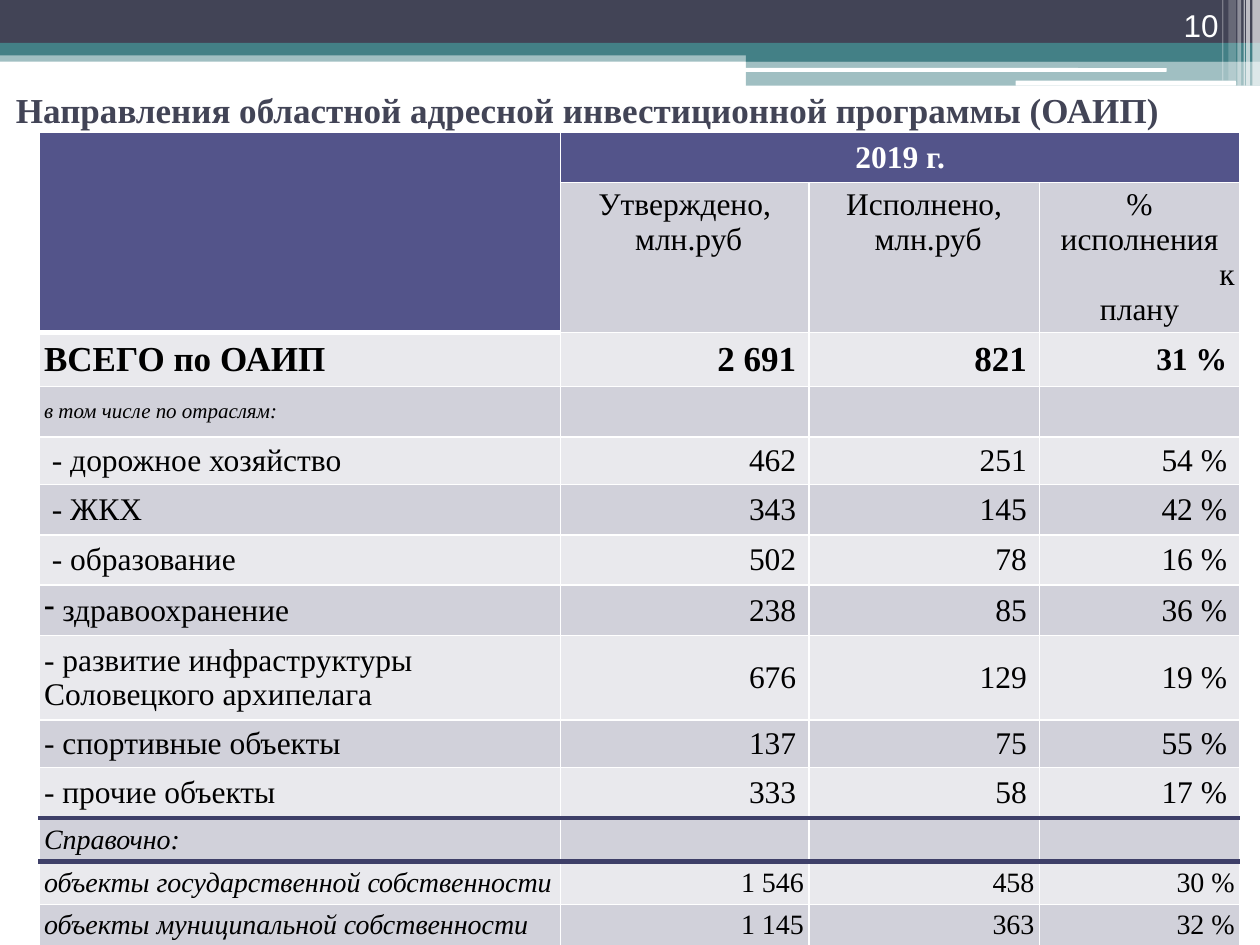
import pptx
import pptx.util
import pptx.dml.color
import pptx.enum.shapes
import pptx.enum.text
import pptx.oxml.ns
import lxml.etree

Inches = pptx.util.Inches
ALIGN = pptx.enum.text.PP_ALIGN
ANCHOR = pptx.enum.text.MSO_ANCHOR
SHAPE = pptx.enum.shapes.MSO_SHAPE
SERIF = "Times New Roman"
INDIGO, SLATE, TEAL, WHITE = "53548A", "424456", "438086", "FFFFFF"
DARK, LIGHT, RULE = "D1D1DA", "E9E9ED", "3E3F68"

BANDS = [
    (0, 0.4, 10, 0.09, TEAL, 50),
    (0, 0, 10, 0.34, SLATE, 100),
    (0, 0.34, 10, 0.1, TEAL, 100),
    (5.92, 0.39, 4.08, 0.1, TEAL, 100),
    (5.92, 0.48, 4.08, 0.2, TEAL, 50),
]
HIGHLIGHTS = [(5.91, 0.54, 3.35, 0.03, WHITE, 100), (8.06, 0.64, 1.75, 0.04, WHITE, 100)]
STRIPES = [
    (9.94, 0, 0.06, 0.68, WHITE, 65),
    (9.89, 0, 0.03, 0.68, WHITE, 65),
    (9.87, 0, 0.01, 0.68, WHITE, 60),
    (9.82, 0, 0.03, 0.68, WHITE, 40),
    (9.75, 0, 0.06, 0.64, WHITE, 20),
    (9.7, 0, 0.01, 0.64, WHITE, 30),
]
COLUMN_WIDTHS = [4.14, 1.97, 1.83, 1.59]
ROW_HEIGHTS = [0.4, 0.84, 0.43, 0.4, 0.33, 0.4, 0.4, 0.4, 0.67, 0.33, 0.4, 0.34, 0.34, 0.44]
COLUMN_TITLES = [
    [("Утверждено,", ALIGN.CENTER), (" млн.руб", ALIGN.CENTER)],
    [("Исполнено,", ALIGN.CENTER), (" млн.руб", ALIGN.CENTER)],
    [("% исполнения", ALIGN.CENTER), ("к", ALIGN.RIGHT), ("плану", ALIGN.CENTER)],
]
PROGRAM_ROWS = [
    ("ВСЕГО по ОАИП", "2 691", "821", "31 %"),
    ("в том числе по отраслям:", "", "", ""),
    (" - дорожное хозяйство", "462", "251", "54 %"),
    (" - ЖКХ", "343", "145", "42 %"),
    (" - образование", "502", "78", "16 %"),
    (" здравоохранение", "238", "85", "36 %"),
    ("- развитие инфраструктуры Соловецкого архипелага", "676", "129", "19 %"),
    ("- спортивные объекты", "137", "75", "55 %"),
    ("- прочие объекты", "333", "58", "17 %"),
    ("Справочно:", "", "", ""),
    ("объекты государственной собственности", "1 546", "458", "30 %"),
    ("объекты муниципальной собственности", "1 145", "363", "32 %"),
]
TOTAL_ROW, SUBHEAD_ROW, HEALTH_ROW, REFERENCE_ROW, LAST_ROW = 2, 3, 7, 11, 13
RULED_ROWS = (REFERENCE_ROW - 1, REFERENCE_ROW)


def rgb(color):
    """Turn a hex string into a colour value."""
    return pptx.dml.color.RGBColor.from_string(color)


def style(paragraph, size, color, name=SERIF, bold=False, italic=False, align=ALIGN.LEFT):
    """Set the font and alignment of a paragraph."""
    font = paragraph.font
    font.size, font.name, font.bold, font.italic = pptx.util.Pt(size), name, bold, italic
    font.color.rgb = rgb(color)
    paragraph.alignment = align


def add_band(slide, preset, left, top, width, height, color, opacity):
    """Add one plain header band of the given opacity in percent."""
    band = slide.shapes.add_shape(preset, Inches(left), Inches(top), Inches(width), Inches(height))
    band.shadow.inherit = False
    band.line.fill.background()
    band.fill.solid()
    band.fill.fore_color.rgb = rgb(color)
    if opacity < 100:
        swatch = band.fill._xPr.find(".//" + pptx.oxml.ns.qn("a:srgbClr"))
        lxml.etree.SubElement(swatch, pptx.oxml.ns.qn("a:alpha"), val=str(opacity * 1000))


def add_header(slide):
    """Add the bands, highlights and stripes along the top edge."""
    for preset, parts in ((SHAPE.RECTANGLE, BANDS), (SHAPE.ROUNDED_RECTANGLE, HIGHLIGHTS),
                          (SHAPE.RECTANGLE, STRIPES)):
        for part in parts:
            add_band(slide, preset, *part)


def add_title(slide, left, top, width, height):
    """Fill the title placeholder."""
    title = slide.shapes.title
    title.left, title.top = Inches(left), Inches(top)
    title.width, title.height = Inches(width), Inches(height)
    frame = title.text_frame
    frame.text = "Направления областной адресной инвестиционной программы (ОАИП)"
    frame.word_wrap = True
    frame.vertical_anchor = ANCHOR.TOP
    frame.margin_top = 0
    style(frame.paragraphs[0], 20, SLATE, bold=True, align=ALIGN.CENTER)


def add_page_number(slide, left, top, width, height):
    """Add the page number in the header."""
    number = slide.shapes.add_textbox(Inches(left), Inches(top), Inches(width), Inches(height))
    frame = number.text_frame
    frame.text = "10"
    frame.word_wrap = True
    frame.vertical_anchor = ANCHOR.BOTTOM
    style(frame.paragraphs[0], 18, WHITE, name="Arial", align=ALIGN.RIGHT)


def set_borders(cell, **edges):
    """Draw the four cell borders, white and thin unless an edge says otherwise."""
    properties = cell._tc.get_or_add_tcPr()
    for side in "LRTB":
        color, points = edges.get(side, (WHITE, 1))
        line = lxml.etree.SubElement(properties, pptx.oxml.ns.qn("a:ln" + side),
                                     w=str(pptx.util.Pt(points)))
        fill = lxml.etree.SubElement(line, pptx.oxml.ns.qn("a:solidFill"))
        lxml.etree.SubElement(fill, pptx.oxml.ns.qn("a:srgbClr"), val=color)


def paint_cell(cell, row, column):
    """Set the borders and fill of a cell by its place in the table."""
    edges = {}
    if row in RULED_ROWS:
        edges["B"] = (RULE, 3)
    if row - 1 in RULED_ROWS:
        edges["T"] = (RULE, 3)
    if row < TOTAL_ROW and column == 0:
        edges["B"] = (WHITE, 3)
    set_borders(cell, **edges)
    heading = row == 0 or (row == 1 and column == 0)
    cell.fill.solid()
    cell.fill.fore_color.rgb = rgb(INDIGO if heading else DARK if row % 2 else LIGHT)


def tighten(cell):
    """Give a cell narrow margins."""
    cell.margin_left = cell.margin_right = cell.margin_top = cell.margin_bottom = Inches(0.04)


def fill_headings(table):
    """Write the year and the column titles."""
    table.cell(0, 0).merge(table.cell(1, 0))
    year = table.cell(0, 1)
    year.merge(table.cell(0, 3))
    year.text = "2019 г."
    year.vertical_anchor = ANCHOR.MIDDLE
    style(year.text_frame.paragraphs[0], 18, WHITE, bold=True, align=ALIGN.CENTER)
    for column, lines in enumerate(COLUMN_TITLES, 1):
        cell = table.cell(1, column)
        tighten(cell)
        cell.text = "\n".join(text for text, _ in lines)
        for paragraph, (_, align) in zip(cell.text_frame.paragraphs, lines):
            style(paragraph, 18, "000000", align=align)


def fill_program_row(table, row, texts):
    """Write one label with its three values."""
    for column, text in enumerate(texts):
        cell = table.cell(row, column)
        label = column == 0
        if label or row > REFERENCE_ROW:
            tighten(cell)
        cell.vertical_anchor = ANCHOR.TOP if row == LAST_ROW else ANCHOR.MIDDLE
        cell.text = text
        size = 16 if row >= REFERENCE_ROW else 12 if row == SUBHEAD_ROW else 18
        if row == TOTAL_ROW and column < 3:
            size = 20
        style(cell.text_frame.paragraphs[0], size, "000000", bold=row == TOTAL_ROW,
              italic=label and (row == SUBHEAD_ROW or row >= REFERENCE_ROW),
              align=ALIGN.LEFT if label else ALIGN.RIGHT)


def add_program_table(slide, left, top, width, height):
    """Add the investment programme table."""
    table = slide.shapes.add_table(len(ROW_HEIGHTS), len(COLUMN_WIDTHS), Inches(left), Inches(top),
                                   Inches(width), Inches(height)).table
    for column, column_width in zip(table.columns, COLUMN_WIDTHS):
        column.width = Inches(column_width)
    for row, (table_row, row_height) in enumerate(zip(table.rows, ROW_HEIGHTS)):
        table_row.height = Inches(row_height)
        for column, cell in enumerate(table_row.cells):
            paint_cell(cell, row, column)
    fill_headings(table)
    for row, texts in enumerate(PROGRAM_ROWS, TOTAL_ROW):
        fill_program_row(table, row, texts)
    health = table.cell(HEALTH_ROW, 0).text_frame.paragraphs[0]._p.get_or_add_pPr()
    health.insert(0, health.makeelement(pptx.oxml.ns.qn("a:buChar"), {"char": "-"}))


def main():
    """Build and save the slide."""
    deck = pptx.Presentation()
    deck.slide_width, deck.slide_height = Inches(10), Inches(7.5)
    slide = deck.slides.add_slide(deck.slide_layouts[5])
    add_header(slide)
    add_title(slide, 0, 0.7, 9.33, 0.55)
    add_program_table(slide, 0.31, 1.05, 9.53, 6.42)
    add_page_number(slide, 8.94, 0, 0.83, 0.4)
    deck.save("out.pptx")


if __name__ == "__main__":
    main()
